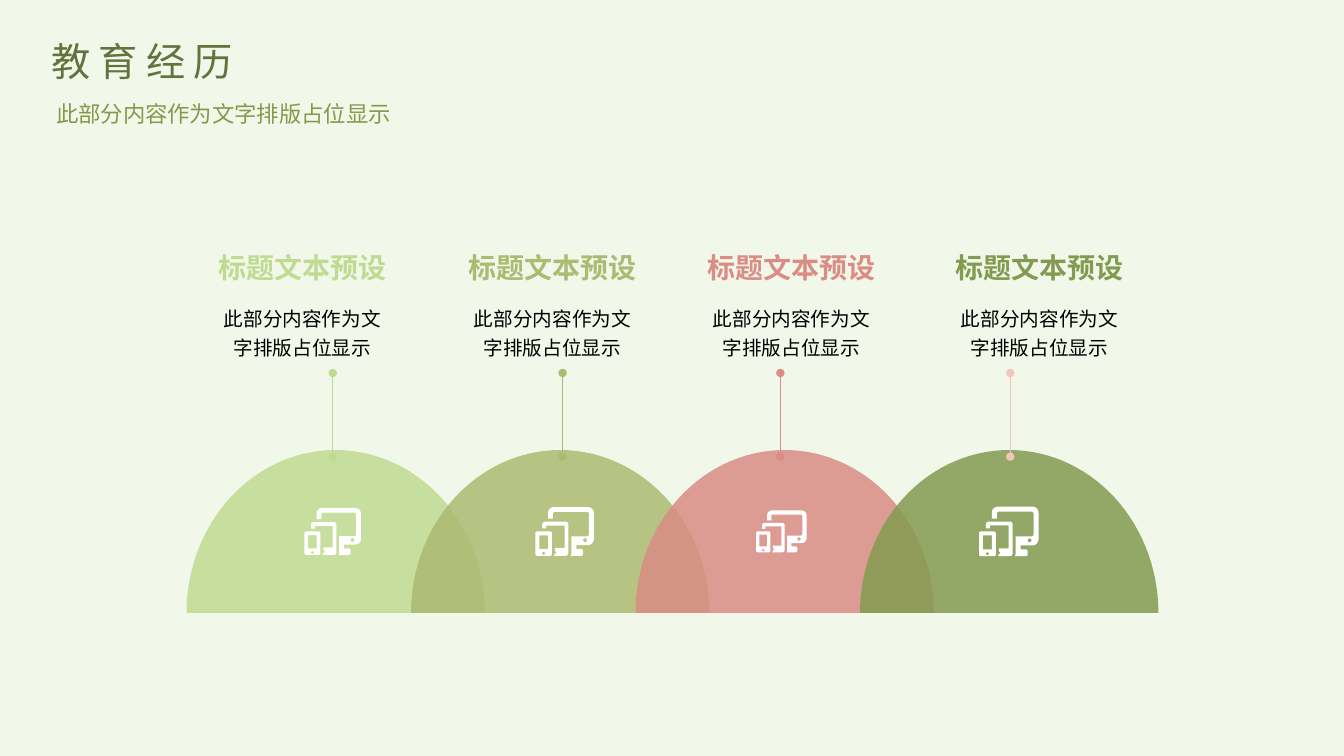
from math import cos, pi, sin
from pptx import Presentation, util as u
from pptx.dml.color import RGBColor
from pptx.enum import shapes as sh, text as tx
from pptx.oxml.ns import qn
from lxml import etree

W, H = 13.33, 7.5
FONT = "Noto Sans CJK SC"
HEAD, BODY = "标题文本预设", "此部分内容作为文字排版占位显示"
MID, LEFT, RIGHT = tx.PP_ALIGN.CENTER, tx.PP_ALIGN.LEFT, tx.PP_ALIGN.RIGHT

# Per column: text left, pin x, icon left, icon width, fill, pin colour
COLS = [
    (2.13, 3.3, 3.02, 0.56, "BFDB91", "BFDB91"),
    (4.61, 5.58, 5.31, 0.58, "ACBA72", "ACBA72"),
    (6.98, 7.74, 7.5, 0.5, "DA8C85", "DA8C85"),
    (9.44, 10.02, 9.71, 0.59, "839B51", "F1C6B9"),
]


def ring(x, y, w, h, r=0):
    return [(x, y, r), (x + w, y, r), (x + w, y + h, r), (x, y + h, r)]


# Devices icon on a grid 60 wide and 50 high: corners as x, y, radius
ICON = [
    ring(0, 25, 17, 25, 2),
    ring(4, 29, 9, 14),
    ring(7, 46, 3, 3, 1.5),
    [(7, 22, 0), (7, 15, 3), (34, 15, 3), (34, 50, 3), (19, 50, 0), (20, 48, 0),
     (22, 46.5, 0), (20, 45, 0), (20, 42, 0), (30, 42, 0), (30, 19, 0),
     (11, 19, 0), (11, 22, 0)],
    [(13, 12, 0), (13, 0, 6), (60, 0, 6), (60, 39, 6), (42, 39, 0), (42, 43, 0),
     (49, 43, 2), (49, 50, 2), (36, 50, 0), (37, 48, 0), (37, 30, 0),
     (55, 30, 2), (55, 5, 2), (18, 5, 2), (18, 12, 0)],
    ring(49, 32, 4, 4, 2),
]


def paint(color, code):
    color.rgb = RGBColor.from_string(code)


def sub(node, tag, **attrs):
    return etree.SubElement(node, qn(tag), attrs)


def label(slide, box, words, size, code, align, wrap=True, bold=False,
          space=None, inset=0, track=None, anchor=tx.MSO_ANCHOR.MIDDLE):
    frame = slide.shapes.add_textbox(*map(u.Inches, box)).text_frame
    frame.word_wrap = wrap
    frame.vertical_anchor = anchor
    frame.margin_left = frame.margin_right = u.Inches(inset)
    frame.margin_top = frame.margin_bottom = u.Inches(inset / 2)
    frame.text = words
    para = frame.paragraphs[0]
    para.alignment = align
    if space:
        para.line_spacing = space
    font = para.runs[0].font
    font.size, font.bold, font.name = u.Pt(size), bold, FONT
    paint(font.color, code)
    props = para.runs[0]._r.get_or_add_rPr()
    sub(props, "a:ea", typeface=FONT)
    if track:
        props.set("spc", str(track * 100))


def trace(slide, rings, code):
    """Fill closed rings of points given in inches."""
    rings = [[(u.Inches(x), u.Inches(y)) for x, y in pts] for pts in rings]
    pen = slide.shapes.build_freeform(*rings[0][0])
    for i, pts in enumerate(rings):
        if i:
            pen.move_to(*pts[0])
        pen.add_line_segments(pts[1:], close=True)
    shape = pen.convert_to_shape()
    shape.shadow.inherit = False
    shape.fill.solid()
    paint(shape.fill.fore_color, code)
    shape.line.fill.background()
    return shape


def bend(corners, steps=6):
    """Round each corner that has a radius."""
    pts = []
    for i, (x, y, r) in enumerate(corners):
        if not r:
            pts.append((x, y))
            continue
        ends = []
        for a, b, _ in (corners[i - 1], corners[(i + 1) % len(corners)]):
            size = ((a - x) ** 2 + (b - y) ** 2) ** 0.5
            ends.append((r * (a - x) / size, r * (b - y) / size))
        (px, py), (qx, qy) = ends
        for k in range(steps + 1):
            t = k / steps * pi / 2
            s, c = 1 - sin(t), 1 - cos(t)
            pts.append((x + px * s + qx * c, y + py * s + qy * c))
    return pts


def header(slide, x, y, w, h):
    top = tx.MSO_ANCHOR.TOP
    label(slide, (x, y, w * 0.77, h * 0.59), "教育经历", 28, "62743D", LEFT,
          inset=0.1, track=6, anchor=top)
    label(slide, (x, y + h * 0.59, w, h * 0.41), BODY, 16, "88974A", RIGHT,
          wrap=False, space=1.2, inset=0.1, anchor=top)


def caption(slide, x, y, w, h, code):
    label(slide, (x, y + h * 0.44, w, h * 0.56), BODY, 14, "000000", MID, space=1.2)
    label(slide, (x, y, w, h * 0.29), HEAD, 20, code, MID, wrap=False, bold=True)


def dome(slide, x, y, w, h, code, steps=60):
    arc = [(x + w / 2 * (1 - cos(pi * k / steps)), y + h * (1 - sin(pi * k / steps)))
           for k in range(steps + 1)]
    shape = trace(slide, [arc], code)
    hue = shape.fill._xPr.find(qn("a:solidFill"))[0]
    sub(hue, "a:alpha", val="85000")


def pin(slide, x, y, h, code):
    ends = map(u.Inches, (x, y + h, x, y))
    line = slide.shapes.add_connector(sh.MSO_CONNECTOR.STRAIGHT, *ends)
    line.line.width = u.Pt(1)
    paint(line.line.color, code)
    stroke = line.line._get_or_add_ln()
    sub(stroke, "a:headEnd", type="oval")
    sub(stroke, "a:tailEnd", type="oval")
    sub(line._element.spPr, "a:effectLst")


def icon(slide, x, mid, w):
    unit = w / 60
    top = mid - 25 * unit
    trace(slide, [[(x + a * unit, top + b * unit) for a, b in bend(part)]
                  for part in ICON], "FFFFFF")


def chart(slide, x, y, w, h):
    """Captions over a row of overlapping domes with pins and icons."""
    wide, tall = 2.96, h * 0.45
    step = (w - wide) / (len(COLS) - 1)
    base = y + h - tall
    for left, _, _, _, code, _ in COLS:
        caption(slide, left, y, 1.74, 1.1, code)
    # The first pin lies under the domes, the others over them
    pins = [(at, y + 1.21, 0.83, code) for _, at, _, _, _, code in COLS]
    pin(slide, *pins[0])
    for i, col in enumerate(COLS):
        dome(slide, x + i * step, base, wide, tall, col[4])
    for spot in pins[1:]:
        pin(slide, *spot)
    for _, _, left, size, _, _ in COLS:
        icon(slide, left, base + tall / 2, size)


def main():
    deck = Presentation()
    deck.slide_width, deck.slide_height = u.Inches(W), u.Inches(H)
    slide = deck.slides.add_slide(deck.slide_layouts[6])
    fill = slide.background.fill
    fill.solid()
    paint(fill.fore_color, "F2F8E9")
    chart(slide, 1.85, 2.49, 9.64, 3.59)
    header(slide, 0.41, 0.32, 3.57, 0.97)
    deck.save("out.pptx")


if __name__ == "__main__":
    main()
